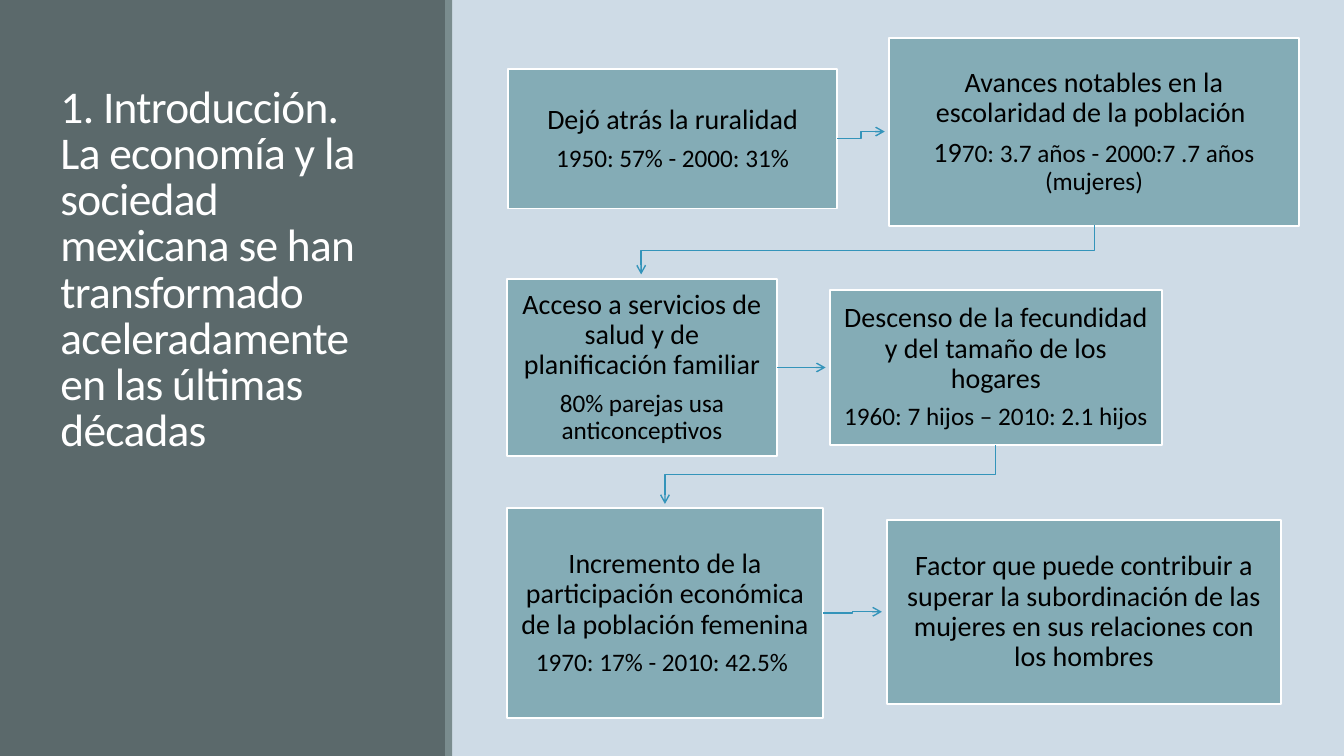
from lxml import etree
from pptx import Presentation
from pptx import util as u
from pptx.dml.color import RGBColor
from pptx.enum import shapes, text
from pptx.oxml import ns

HUES = {
    "back": "CEDBE6", "panel": "5B696B", "edge": "7A8C8E", "box": "84ACB6",
    "line": "3494BA", "white": "FFFFFF", "ink": "000000",
}
HEAD = ("1. Introducción.\vLa economía y la sociedad mexicana se han "
        "transformado aceleradamente en las últimas décadas")
BOXES = [
    ((363, 49.5, 235, 99.5),
     [[("Dejó atrás la ruralidad", 20)], [("1950: 57% - 2000: 31%", 18)]]),
    ((635, 27.25, 293, 134),
     [[("Avances notables en la escolaridad de la población ", 20)],
      [("19", 20), ("70: 3.7 años - 2000:7 .7 años (mujeres)", 18)]]),
    ((362, 199.5, 193, 126),
     [[("Acceso a servicios de salud y de planificación familiar", 20)],
      [("80% parejas usa anticonceptivos", 18)]]),
    ((592.75, 207, 237.25, 111),
     [[("Descenso de la fecundidad y del tamaño de los hogares", 20)],
      [("1960: 7 hijos – 2010: 2.1 hijos", 18)]]),
    ((362, 363, 226, 150),
     [[("Incremento de la participación económica de la población femenina", 20)],
      [("1970: 17% - 2010: 42.5% ", 18)]]),
    ((633.5, 371.5, 281.5, 131.5),
     [[("Factor que puede contribuir a superar la subordinación de las "
        "mujeres en sus relaciones con los hombres", 20)]]),
]
GAP = 3


def hue(name):
    return RGBColor.from_string(HUES[name])


def apply(thing, **form):
    for key, val in form.items():
        setattr(thing, key, val)


def paint(fill, name):
    fill.solid()
    fill.fore_color.rgb = hue(name)


def style(run, size, name):
    apply(run.font, name="Calibri", size=u.Pt(size), bold=False)
    run.font.color.rgb = hue(name)


def add_block(slide, place, fill, rim=None):
    block = slide.shapes.add_shape(
        shapes.MSO_SHAPE.RECTANGLE, *map(u.Pt, place))
    block.shadow.inherit = False
    paint(block.fill, fill)
    if rim:
        paint(block.line.fill, rim)
        block.line.width = u.Pt(1.25)
    else:
        block.line.fill.background()
    return block


def add_box(slide, place, paras):
    frame = add_block(slide, place, "box", "white").text_frame
    apply(frame, word_wrap=True, vertical_anchor=text.MSO_ANCHOR.MIDDLE,
          margin_left=u.Pt(8), margin_right=u.Pt(8),
          margin_top=u.Pt(8.5), margin_bottom=u.Pt(8.5))
    for num, runs in enumerate(paras):
        para = frame.add_paragraph() if num else frame.paragraphs[0]
        apply(para, alignment=text.PP_ALIGN.CENTER, line_spacing=0.9,
              space_after=u.Pt(7))
        for words, size in runs:
            run = para.add_run()
            run.text = words
            style(run, size, "ink")


def find_route(start, end):
    x, y, w, h = start
    left, top, wide, high = end
    if left > x + w:
        x, y = x + w, y + h / 2
        tip = left - GAP, top + high / 2
        mid = (x + tip[0]) / 2
        bends = [(mid, y), (mid, tip[1])]
    else:
        x, y = x + w / 2, y + h
        tip = left + wide / 2, top - GAP
        mid = (y + tip[1]) / 2
        bends = [(x, mid), (tip[0], mid)]
    if y == tip[1]:
        bends = []
    return [(x, y), *bends, tip]


def add_arrow(slide, route):
    if len(route) == 2:
        arrow = slide.shapes.add_connector(
            shapes.MSO_CONNECTOR.STRAIGHT, *(u.Pt(n) for dot in route for n in dot))
        etree.SubElement(arrow.element.spPr, ns.qn("a:effectLst"))
    else:
        path = slide.shapes.build_freeform(*route[0], scale=u.Pt(1))
        path.add_line_segments(route[1:], close=False)
        arrow = path.convert_to_shape()
        arrow.shadow.inherit = False
        arrow.fill.background()
    paint(arrow.line.fill, "line")
    arrow.line.width = u.Pt(1)
    line = arrow.element.spPr.find(ns.qn("a:ln"))
    etree.SubElement(line, ns.qn("a:tailEnd"), type="arrow")


def add_title(slide):
    title = slide.shapes.title
    apply(title, left=u.Pt(36), top=u.Pt(89.5), width=u.Pt(252), height=u.Pt(240))
    frame = title.text_frame
    frame.text = HEAD
    apply(frame, word_wrap=True, auto_size=text.MSO_AUTO_SIZE.NONE,
          vertical_anchor=text.MSO_ANCHOR.BOTTOM)
    para = frame.paragraphs[0]
    apply(para, alignment=text.PP_ALIGN.LEFT, line_spacing=0.85)
    for run in para.runs:
        style(run, 32.4, "white")
        run.font.element.set("spc", "-50") if hasattr(run.font, "element") \
            else run._r.get_or_add_rPr().set("spc", "-50")
    return title


def main():
    deck = Presentation()
    apply(deck, slide_width=u.Pt(960), slide_height=u.Pt(540))
    slide = deck.slides.add_slide(deck.slide_layouts[5])
    paint(slide.background.fill, "back")
    title = add_title(slide)
    for place, fill in (((0, 0, 319, 540), "panel"), ((318, 0, 5, 540), "edge")):
        title.element.addprevious(add_block(slide, place, fill).element)
    for place, paras in BOXES:
        add_box(slide, place, paras)
    for (start, _), (end, _) in zip(BOXES, BOXES[1:]):
        add_arrow(slide, find_route(start, end))
    deck.save("out.pptx")


if __name__ == "__main__":
    main()
